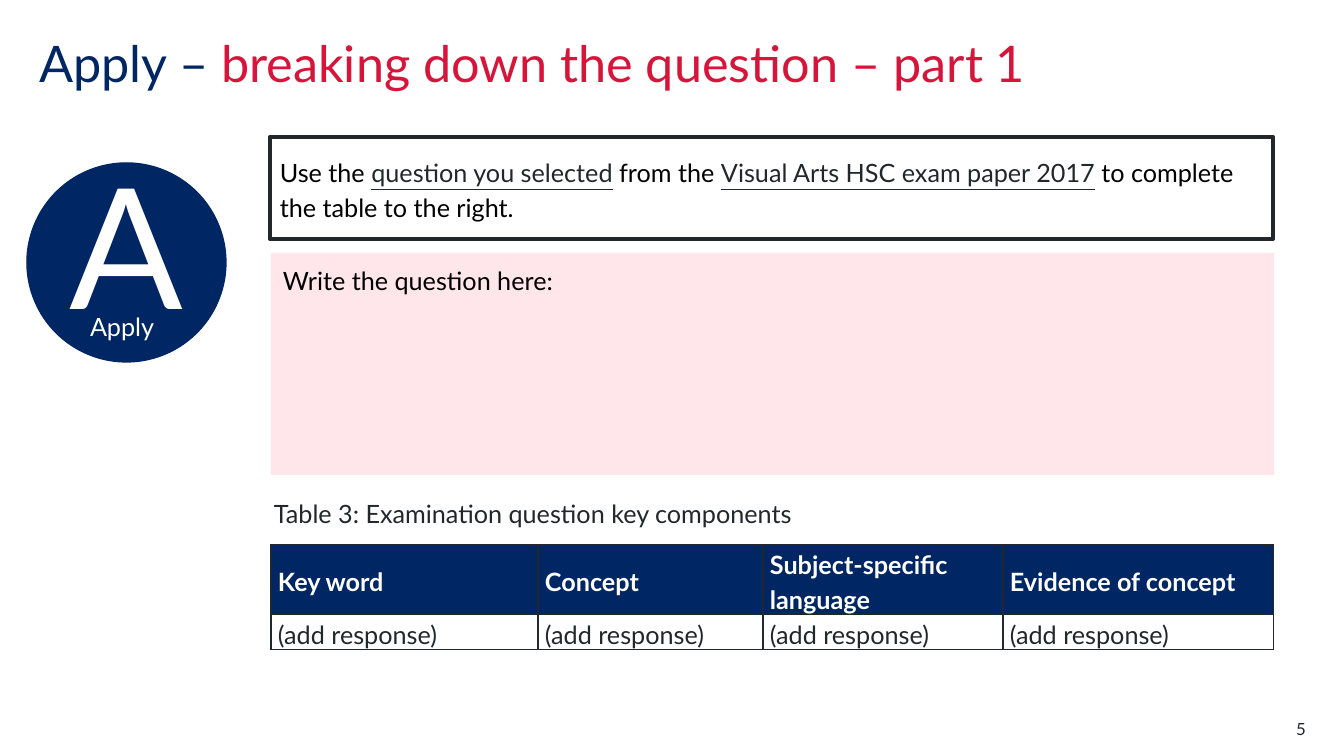
from lxml.etree import SubElement
from pptx import Presentation
from pptx.dml.color import RGBColor
from pptx.enum.shapes import MSO_SHAPE as Shape
from pptx.enum.text import MSO_ANCHOR as Anchor, MSO_AUTO_SIZE as AutoSize, PP_ALIGN as Align
from pptx.oxml.ns import qn
from pptx.util import Pt

EMU_PER_PX = 914400 / 100.8
NAVY, RED, PINK = "002664", "D7153A", "FFE6EA"
INK, BLACK, WHITE = "22272B", "000000", "FFFFFF"


def px(length):
    return round(length * EMU_PER_PX)


def rgb(value):
    return RGBColor.from_string(value)


class SlideBuilder:
    font = "Lato"
    body_size = 18

    def __init__(self, deck):
        self.page = deck.slides.add_slide(deck.slide_layouts[5])

    def set_text(self, frame, spans, size=body_size, color=INK, align=Align.LEFT,
                 anchor=Anchor.TOP, spacing=1.0, bold=False, insets=None):
        frame.word_wrap = True
        frame.auto_size = AutoSize.NONE
        frame.vertical_anchor = anchor
        if insets:
            (frame.margin_left, frame.margin_top,
             frame.margin_right, frame.margin_bottom) = map(px, insets)
        self.fill_paragraph(frame.paragraphs[0], spans, size, color, align, spacing, bold)

    def fill_paragraph(self, para, spans, size, color, align, spacing, bold):
        para.alignment = align
        para.line_spacing = spacing
        para.font.name = self.font
        para.font.size = Pt(size)
        para.font.bold = bold
        for text, span_color, underline in spans:
            span = para.add_run()
            span.text = text
            span.font.color.rgb = rgb(span_color or color)
            if underline:
                span.font.underline = True

    def title(self, area, spans):
        heading = self.page.shapes.title
        heading.left, heading.top, heading.width, heading.height = map(px, area)
        self.set_text(heading.text_frame, spans, size=36, spacing=0.9, insets=(0, 0, 0, 0))

    def shape(self, kind, area, fill, line=None, weight=1):
        box = self.page.shapes.add_shape(kind, *map(px, area))
        box.shadow.inherit = False
        box.fill.solid()
        box.fill.fore_color.rgb = rgb(fill)
        if line:
            box.line.color.rgb = rgb(line)
            box.line.width = Pt(weight)
        else:
            box.line.fill.background()
        return box

    def label(self, area, text, **style):
        box = self.page.shapes.add_textbox(*map(px, area))
        self.set_text(box.text_frame, [(text, None, False)], insets=(0, 0, 0, 0), **style)

    def border(self, cell, color):
        properties = cell._tc.get_or_add_tcPr()
        for side in ("lnL", "lnR", "lnT", "lnB"):
            edge = SubElement(properties, qn(f"a:{side}"), w=str(Pt(1)))
            SubElement(SubElement(edge, qn("a:solidFill")), qn("a:srgbClr"), val=color)

    def table(self, left, top, widths, heights, rows):
        area = map(px, (left, top, sum(widths), sum(heights)))
        grid = self.page.shapes.add_table(len(rows), len(widths), *area).table
        for column, width in zip(grid.columns, widths):
            column.width = px(width)
        for row, height in zip(grid.rows, heights):
            row.height = px(height)
        for r, texts in enumerate(rows):
            header = r == 0
            for c, text in enumerate(texts):
                cell = grid.cell(r, c)
                self.border(cell, INK)
                cell.fill.solid()
                cell.fill.fore_color.rgb = rgb(NAVY if header else WHITE)
                cell.vertical_anchor = Anchor.MIDDLE
                cell.margin_left = cell.margin_right = px(7)
                cell.margin_top = cell.margin_bottom = 0
                self.fill_paragraph(cell.text_frame.paragraphs[0], [(text, None, False)],
                                    self.body_size, WHITE if header else INK,
                                    Align.LEFT, 1.15, header)


def main():
    deck = Presentation()
    deck.slide_width, deck.slide_height = px(1344), px(756)
    slide = SlideBuilder(deck)

    slide.title((39, 39, 1111, 111), [
        ("Apply – ", NAVY, False),
        ("breaking down the question – part 1", RED, False)])

    badge = slide.shape(Shape.OVAL, (27, 163, 199, 199), NAVY, NAVY)
    slide.set_text(badge.text_frame, [("A", WHITE, False)], size=120, align=Align.CENTER,
                   anchor=Anchor.MIDDLE, insets=(10, 5, 10, 45))
    slide.label((90, 311, 74, 48), "Apply", color=WHITE)

    instruction = slide.shape(Shape.RECTANGLE, (270, 137, 1003, 102), WHITE, INK, 3)
    slide.set_text(instruction.text_frame, [
        ("Use the ", BLACK, False),
        ("question you selected", INK, True),
        (" from the ", BLACK, False),
        ("Visual Arts HSC exam paper 2017", INK, True),
        (" to complete the table to the right.", BLACK, False)],
        anchor=Anchor.MIDDLE, spacing=1.14)

    slide.shape(Shape.RECTANGLE, (271, 253, 1003, 222), PINK)
    prompt = slide.shape(Shape.RECTANGLE, (273, 256, 312, 42), PINK)
    slide.set_text(prompt.text_frame, [("Write the question here:", BLACK, False)], spacing=1.14)

    caption = slide.shape(Shape.RECTANGLE, (264, 490, 593, 42), WHITE)
    slide.set_text(caption.text_frame,
                   [("Table 3: Examination question key components", INK, False)],
                   anchor=Anchor.MIDDLE, spacing=1.14)

    headings = ["Key word", "Concept", "Subject-specific language", "Evidence of concept"]
    slide.table(271, 545, (267, 225, 240, 271), (69, 35),
                [headings, ["(add response)"] * len(headings)])

    slide.label((1227, 719, 79, 20), "5", size=12, align=Align.RIGHT)
    deck.save("out.pptx")


if __name__ == "__main__":
    main()
